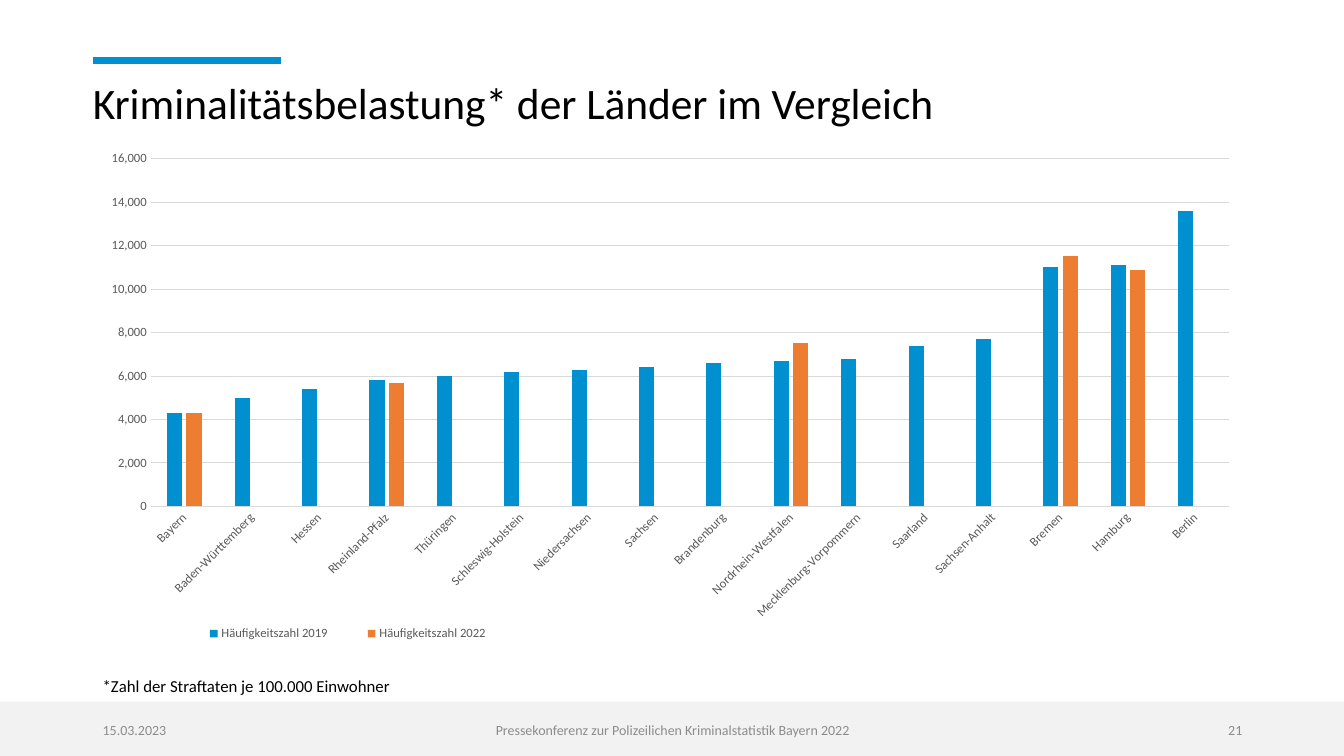
from lxml.etree import SubElement
from pptx import Presentation
from pptx.chart.data import CategoryChartData
from pptx.dml.color import RGBColor
from pptx.enum.chart import XL_CHART_TYPE, XL_LEGEND_POSITION, XL_TICK_MARK
from pptx.enum.shapes import MSO_CONNECTOR, MSO_SHAPE
from pptx.enum.text import MSO_ANCHOR, MSO_AUTO_SIZE, PP_ALIGN
from pptx.oxml import parse_xml
from pptx.oxml.ns import nsdecls, qn
from pptx.util import Inches, Pt

BLUE = RGBColor(0x00, 0x8F, 0xCF)
ORANGE = RGBColor(0xED, 0x7D, 0x31)
BLACK = RGBColor(0x00, 0x00, 0x00)
LABEL_GRAY = RGBColor(0x59, 0x59, 0x59)
FOOTER_GRAY = RGBColor(0x8C, 0x8C, 0x8C)
GRID_GRAY = RGBColor(0xD9, 0xD9, 0xD9)
BAND_GRAY = RGBColor(0xF2, 0xF2, 0xF2)

LEFT, WIDTH = 0.92, 11.5

CRIME_RATES = [
    ("Bayern", 4300, 4300),
    ("Baden-Württemberg", 5000, None),
    ("Hessen", 5400, None),
    ("Rheinland-Pfalz", 5800, 5700),
    ("Thüringen", 6000, None),
    ("Schleswig-Holstein", 6200, None),
    ("Niedersachsen", 6300, None),
    ("Sachsen", 6400, None),
    ("Brandenburg", 6600, None),
    ("Nordrhein-Westfalen", 6700, 7500),
    ("Mecklenburg-Vorpommern", 6800, None),
    ("Saarland", 7400, None),
    ("Sachsen-Anhalt", 7700, None),
    ("Bremen", 11000, 11500),
    ("Hamburg", 11100, 10900),
    ("Berlin", 13600, None),
]


class SlideBuilder:
    font_name = "Calibri"

    def __init__(self, deck):
        self.page = deck.slides.add_slide(deck.slide_layouts[5])

    def style(self, font, size, color):
        font.name = self.font_name
        font.size = Pt(size)
        font.color.rgb = color

    def add_span(self, para, text, size, color):
        span = para.add_run()
        span.text = text
        self.style(span.font, size, color)

    def title(self, text, left, top, width, height):
        box = self.page.shapes.title
        box.left, box.top, box.width, box.height = map(Inches, (left, top, width, height))
        frame = box.text_frame
        frame.margin_left = 0
        frame.word_wrap = True
        frame.auto_size = MSO_AUTO_SIZE.NONE
        frame.vertical_anchor = MSO_ANCHOR.TOP
        para = frame.paragraphs[0]
        para.alignment = PP_ALIGN.LEFT
        para.line_spacing = 0.9
        self.add_span(para, text, 31, BLACK)

    def text(self, text, left, top, width, height, size, color,
             align=PP_ALIGN.LEFT, anchor=MSO_ANCHOR.TOP):
        box = self.page.shapes.add_textbox(*map(Inches, (left, top, width, height)))
        frame = box.text_frame
        frame.word_wrap = True
        frame.vertical_anchor = anchor
        para = frame.paragraphs[0]
        para.alignment = align
        self.add_span(para, text, size, color)

    def band(self, left, top, width, height, color):
        band = self.page.shapes.add_shape(
            MSO_SHAPE.RECTANGLE, *map(Inches, (left, top, width, height)))
        band.shadow.inherit = False
        band.fill.solid()
        band.fill.fore_color.rgb = color
        band.line.fill.background()

    def rule(self, left, right, top, color, weight):
        rule = self.page.shapes.add_connector(
            MSO_CONNECTOR.STRAIGHT, *map(Inches, (left, top, right, top)))
        rule.line.color.rgb = color
        rule.line.width = Pt(weight)
        SubElement(rule._element.spPr, qn("a:effectLst"))

    def layout(self, x, y, width, height, inner=False):
        target = '<c:layoutTarget val="inner"/>' if inner else ""
        return parse_xml(
            f'<c:layout {nsdecls("c")}><c:manualLayout>{target}'
            '<c:xMode val="edge"/><c:yMode val="edge"/>'
            f'<c:x val="{x}"/><c:y val="{y}"/><c:w val="{width}"/><c:h val="{height}"/>'
            '</c:manualLayout></c:layout>')

    def columns(self, rows, names, colors, left, top, width, height):
        states, *years = zip(*rows)
        data = CategoryChartData(number_format="#,##0")
        data.categories = states
        for name, values in zip(names, years):
            data.add_series(name, values)
        chart = self.page.shapes.add_chart(
            XL_CHART_TYPE.COLUMN_CLUSTERED,
            *map(Inches, (left, top, width, height)), data).chart
        self.style(chart.font, 10, BLACK)
        chart.has_title = False

        plot = chart.plots[0]
        plot.gap_width = 219
        plot.overlap = -27
        plot.vary_by_categories = False
        for series, color in zip(plot.series, colors):
            series.invert_if_negative = False
            series.format.fill.solid()
            series.format.fill.fore_color.rgb = color

        for axis in (chart.category_axis, chart.value_axis):
            axis.major_tick_mark = XL_TICK_MARK.NONE
            axis.minor_tick_mark = XL_TICK_MARK.NONE
            self.style(axis.tick_labels.font, 9, LABEL_GRAY)
        state_axis, rate_axis = chart.category_axis, chart.value_axis
        rate_axis.minimum_scale = 0
        rate_axis.maximum_scale = 16000
        rate_axis.major_unit = 2000
        rate_axis.tick_labels.number_format = "#,##0"
        rate_axis.tick_labels.number_format_is_linked = False
        rate_axis.format.line.fill.background()
        for line in (state_axis.format.line, rate_axis.major_gridlines.format.line):
            line.color.rgb = GRID_GRAY
            line.width = Pt(0.75)
        state_axis._element.find(qn("c:txPr")).find(qn("a:bodyPr")).set("rot", "-2700000")

        chart.has_legend = True
        legend = chart.legend
        legend.position = XL_LEGEND_POSITION.BOTTOM
        legend.include_in_layout = False
        self.style(legend.font, 9, LABEL_GRAY)

        plot_area = chart._chartSpace.chart.plotArea
        for part in (plot_area, legend._element):
            for layout in part.findall(qn("c:layout")):
                part.remove(layout)
        plot_area.insert(0, self.layout(0.05, 0.03, 0.93, 0.67, inner=True))
        legend._element.find(qn("c:legendPos")).addnext(self.layout(0.07, 0.91, 0.3, 0.07))


def main():
    deck = Presentation()
    deck.slide_width, deck.slide_height = Inches(13.33), Inches(7.5)
    slide = SlideBuilder(deck)

    slide.band(0, 6.96, 13.33, 0.54, BAND_GRAY)
    slide.rule(LEFT, 2.79, 0.6, BLUE, 5)
    slide.title("Kriminalitätsbelastung* der Länder im Vergleich", LEFT, 0.76, WIDTH, 0.65)

    footer = [
        ("15.03.2023", LEFT, 3, PP_ALIGN.LEFT),
        ("Pressekonferenz zur Polizeilichen Kriminalstatistik Bayern 2022",
         4.42, 4.5, PP_ALIGN.CENTER),
        ("21", 9.42, 3, PP_ALIGN.RIGHT),
    ]
    for text, left, width, align in footer:
        slide.text(text, left, 7.04, width, 0.4, 10, FOOTER_GRAY, align, MSO_ANCHOR.MIDDLE)

    slide.text("*Zahl der Straftaten je 100.000 Einwohner", LEFT, 6.65, 3.44, 0.3, 12, BLACK)
    slide.columns(CRIME_RATES, ("Häufigkeitszahl 2019", "Häufigkeitszahl 2022"),
                  (BLUE, ORANGE), LEFT, 1.42, WIDTH, 5.15)

    deck.save("out.pptx")


if __name__ == "__main__":
    main()
